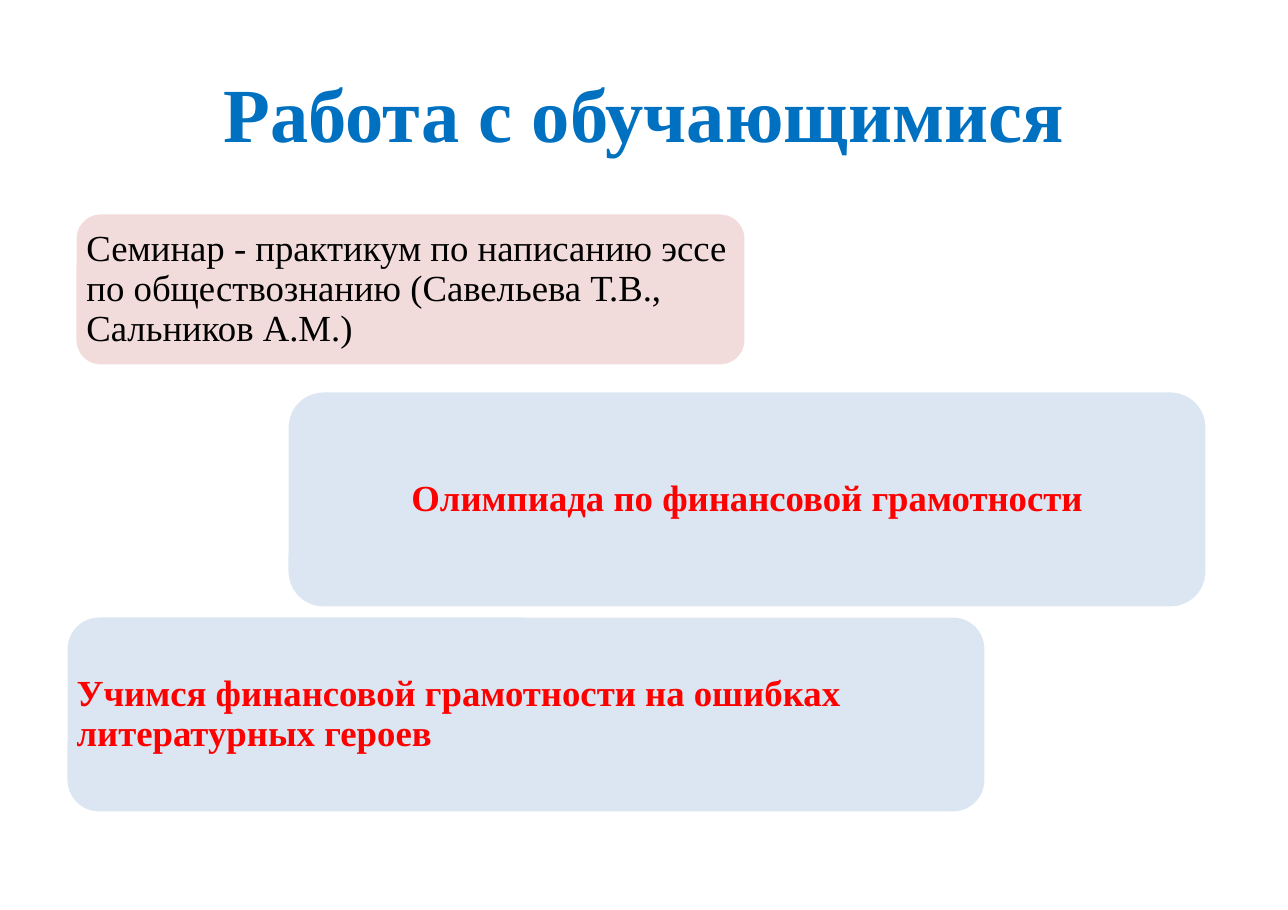
from dataclasses import dataclass

from pptx import Presentation
from pptx.dml.color import RGBColor
from pptx.enum.shapes import MSO_SHAPE
from pptx.enum.text import MSO_ANCHOR, PP_ALIGN
from pptx.util import Emu, Pt

EMU_PER_PX = 914400 / 110.2
CORNER_INSET = 0.049  # share of the height that rounded corners take from the text area


@dataclass(frozen=True)
class Theme:
    font: str = "Times New Roman"
    title_size: int = 50
    body_size: int = 24
    title: str = "0070C0"
    ink: str = "000000"
    accent: str = "FF0000"
    rose: str = "F2DCDB"
    sky: str = "DCE6F2"
    outline: str = "FFFFFF"


def px(length):
    return Emu(round(length * EMU_PER_PX))


class SlideBuilder:
    def __init__(self, deck, theme):
        self.theme = theme
        self.slide = deck.slides.add_slide(deck.slide_layouts[6])

    def set_text(self, box, text, size, color, bold, align, inset_x, inset_y, line_spacing):
        frame = box.text_frame
        frame_format = {
            "word_wrap": True,
            "vertical_anchor": MSO_ANCHOR.MIDDLE,
            "margin_left": px(inset_x),
            "margin_right": px(inset_x),
            "margin_top": px(inset_y),
            "margin_bottom": px(inset_y),
        }
        for name, value in frame_format.items():
            setattr(frame, name, value)
        para = frame.paragraphs[0]
        para.alignment = align
        para.line_spacing = line_spacing
        span = para.add_run()
        span.text = text
        font_format = {"name": self.theme.font, "size": Pt(size), "bold": bold}
        for name, value in font_format.items():
            setattr(span.font, name, value)
        span.font.color.rgb = RGBColor.from_string(color)

    def title(self, text, bounds):
        box = self.slide.shapes.add_textbox(*map(px, bounds))
        self.set_text(box, text, self.theme.title_size, self.theme.title, True,
                      PP_ALIGN.CENTER, 12, 7, 1.0)

    def card(self, text, bounds, fill, color, bold, align):
        box = self.slide.shapes.add_shape(MSO_SHAPE.ROUNDED_RECTANGLE, *map(px, bounds))
        box.shadow.inherit = False
        box.fill.solid()
        box.fill.fore_color.rgb = RGBColor.from_string(fill)
        box.line.color.rgb = RGBColor.from_string(self.theme.outline)
        box.line.width = Pt(2)
        inset = round(11 - bounds[3] * CORNER_INSET)
        self.set_text(box, text, self.theme.body_size, color, bold, align, inset, inset, 0.9)


def main():
    deck = Presentation()
    deck.slide_width, deck.slide_height = px(1288), px(910)
    theme = Theme()
    builder = SlideBuilder(deck, theme)
    builder.title("Работа с обучающимися", (64, 36, 1160, 152))
    cards = [
        ("Семинар - практикум по написанию эссе по обществознанию "
         "(Савельева Т.В., Сальников А.М.)",
         (75, 213, 671, 153), theme.rose, theme.ink, False, PP_ALIGN.LEFT),
        ("Олимпиада по финансовой грамотности",
         (287, 391, 920, 217), theme.sky, theme.accent, True, PP_ALIGN.CENTER),
        ("Учимся финансовой грамотности на ошибках литературных героев",
         (66, 616, 920, 197), theme.sky, theme.accent, True, PP_ALIGN.LEFT),
    ]
    for card in cards:
        builder.card(*card)
    deck.save("out.pptx")


if __name__ == "__main__":
    main()
